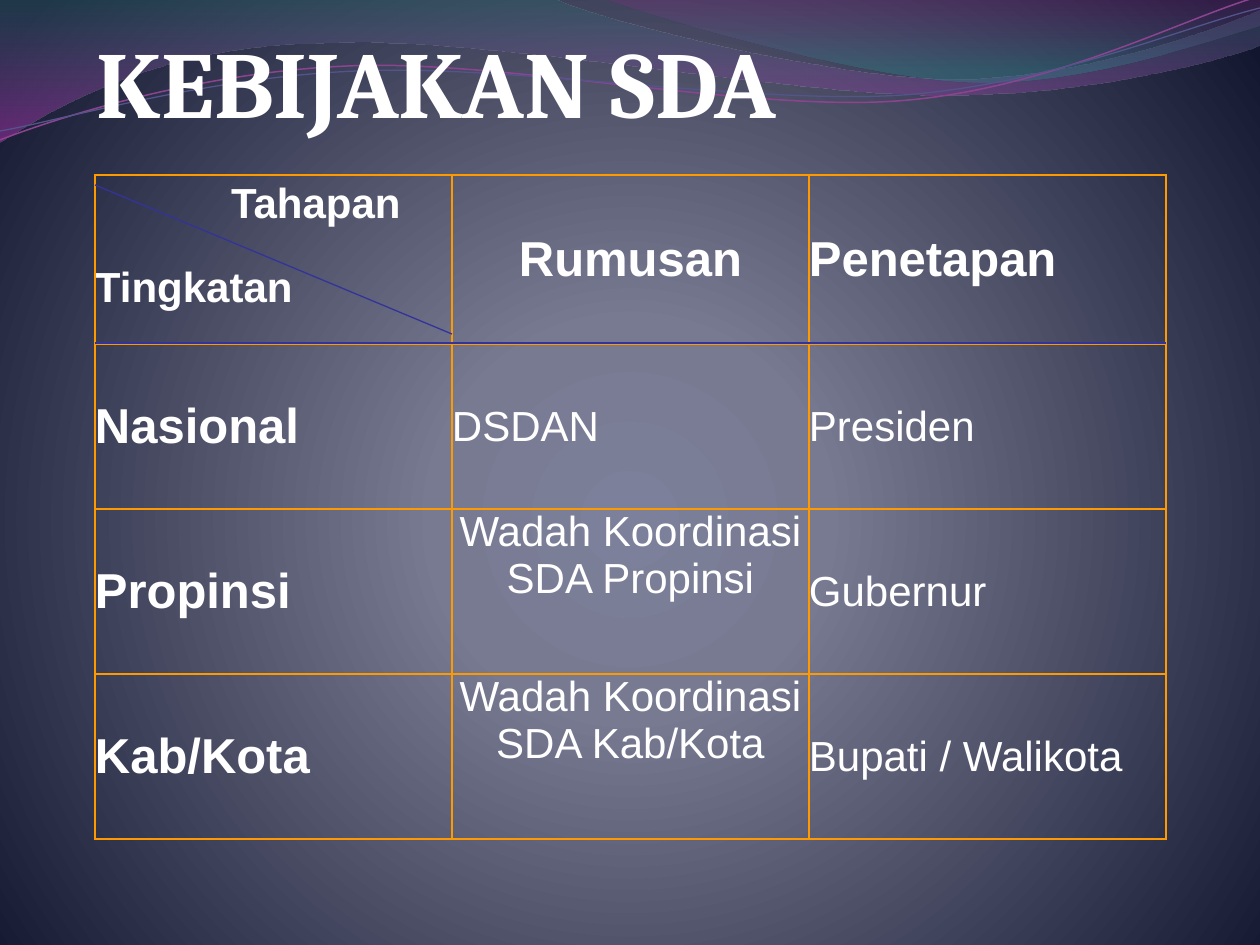
from dataclasses import dataclass
from math import cos, radians, sin

from pptx import Presentation
from pptx.dml.color import RGBColor as Rgb
from pptx.enum.shapes import MSO_CONNECTOR as Connector
from pptx.enum.text import MSO_ANCHOR as Anchor, PP_ALIGN as Align
from pptx.oxml import parse_xml
from pptx.oxml.ns import nsdecls
from pptx.util import Emu, Pt

EMU_PER_PX = 914400 / 126


@dataclass(frozen=True)
class Theme:
    text: str = "FFFFFF"
    border: str = "FF9900"
    rule: str = "333399"
    title_font: str = "Cambria"
    body_font: str = "Arial"
    title_size: int = 54
    heading_size: int = 28
    body_size: int = 24
    # Gradient stops: position %, colour, opacity %
    backdrop: tuple = ((0, "7D809A", 100), (25, "787A92", 100), (100, "13162F", 100))
    wide_wave: tuple = ((0, "2D6368", 45), (100, "A530A9", 55))
    corner_wave: tuple = ((0, "7F2F82", 30), (80, "2F7B82", 45))
    upper_strand: str = "8D4490"
    lower_strand: str = "53548A"


THEME = Theme()

# Outlines in px: two numbers are a straight step, six are a Bezier curve
WIDE_WAVE = [(0, -1), (554, -1), (600, 21, 837, 79, 955, 79),
             (1075, 79, 1207, 33, 1260, 11), (1261, 45),
             (1239, 55, 1096, 96, 940, 95), (784, 95, 481, 35, 324, 43),
             (163, 44, 58, 105, -1, 142), (0, -1)]
CORNER_WAVE = [(604, -1), (641, 14, 859, 78, 969, 82),
               (1079, 87, 1211, 40, 1260, 26), (1260, 0), (604, -1)]
UPPER_STRAND = [(0, 140), (60, 117, 199, 72, 349, 66),
                (498, 59, 747, 112, 898, 101), (1049, 90, 1182, 19, 1257, -3)]
LOWER_STRAND = [(0, 131), (59, 121, 207, 77, 357, 71),
                (508, 64, 752, 105, 903, 95), (1053, 84, 1186, 26, 1260, 8)]
STRAND_TURN = 357.3

TABLE_LEFT, TABLE_TOP, COLUMN_WIDTH = 95, 175, 357
ROW_HEIGHTS = [169, 165, 165, 165]
LEVELS = [
    ("Nasional", "DSDAN", "Presiden"),
    ("Propinsi", "Wadah Koordinasi SDA Propinsi", "Gubernur"),
    ("Kab/Kota", "Wadah Koordinasi SDA Kab/Kota", "Bupati / Walikota"),
]


def px(length):
    return Emu(round(length * EMU_PER_PX))


def set_values(target, values):
    for name, value in values.items():
        setattr(target, name, value)


def gradient(stops, direction):
    marks = "".join(
        f'<a:gs pos="{pos * 1000}"><a:srgbClr val="{color}">'
        f'<a:alpha val="{opacity * 1000}"/></a:srgbClr></a:gs>'
        for pos, color, opacity in stops)
    return parse_xml(f'<a:gradFill {nsdecls("a")} rotWithShape="1">'
                     f'<a:gsLst>{marks}</a:gsLst>{direction}</a:gradFill>')


def put_gradient(fill, holder, stops, direction):
    fill.gradient()
    preset = next(holder.iter("{*}gradFill"))
    preset.getparent().replace(preset, gradient(stops, direction))


def turn(point, center, degrees):
    angle = radians(degrees)
    x, y = point[0] - center[0], point[1] - center[1]
    return (center[0] + x * cos(angle) - y * sin(angle),
            center[1] + x * sin(angle) + y * cos(angle))


def add_outline(slide, outline, close, center=(0, 0), rotation=0):
    """Draw the outline; a rotated one is laid flat first, then turned."""
    nodes = [turn(part[i:i + 2], center, -rotation)
             for part in outline for i in range(0, len(part), 2)]
    start, *rest = [(px(x), px(y)) for x, y in nodes]
    builder = slide.shapes.build_freeform(*start)
    builder.add_line_segments(rest, close=close)
    shape = builder.convert_to_shape()
    set_values(shape, {"rotation": rotation})
    shape.shadow.inherit = False

    # Gather the three steps of each curve into one Bezier segment
    steps = iter(list(shape.element.iter("{*}lnTo")))
    for part in outline[1:]:
        segment = [next(steps) for _ in range(len(part) // 2)]
        if len(segment) == 3:
            curve = parse_xml(f'<a:cubicBezTo {nsdecls("a")}/>')
            segment[0].addprevious(curve)
            for step in segment:
                curve.append(step[0])
                step.getparent().remove(step)
    return shape


def add_wave(slide, outline, stops):
    wave = add_outline(slide, outline, True)
    put_gradient(wave.fill, wave.element.spPr, stops, '<a:lin ang="5400000" scaled="1"/>')
    wave.line.fill.background()


def add_strand(slide, outline, center, color, width):
    strand = add_outline(slide, outline, False, center, STRAND_TURN)
    strand.fill.background()
    strand.line.color.rgb = Rgb.from_string(color)
    strand.line.width = Pt(width)


def add_rule(slide, start, end):
    rule = slide.shapes.add_connector(Connector.STRAIGHT, *map(px, start + end))
    rule.line.color.rgb = Rgb.from_string(THEME.rule)
    rule.line.width = Pt(0.75)
    rule.element.spPr.append(parse_xml(f'<a:effectLst {nsdecls("a")}/>'))


def write(paragraph, words, size, bold, font=THEME.body_font, align=Align.LEFT):
    paragraph.alignment = align
    run = paragraph.add_run()
    run.text = words
    set_values(run.font, {"name": font, "size": Pt(size), "bold": bold})
    run.font.color.rgb = Rgb.from_string(THEME.text)


def format_cell(cell, anchor):
    set_values(cell, {"margin_left": 0, "margin_top": 0, "margin_right": 0,
                      "margin_bottom": 0, "vertical_anchor": anchor})
    cell.fill.background()
    properties = cell._tc.get_or_add_tcPr()
    for place, side in enumerate("LRTB"):
        properties.insert(place, parse_xml(
            f'<a:ln{side} {nsdecls("a")} w="{Pt(1)}"><a:solidFill>'
            f'<a:srgbClr val="{THEME.border}"/></a:solidFill></a:ln{side}>'))


def fill_corner(cell):
    format_cell(cell, Anchor.TOP)
    cell.margin_top = px(6)
    stage = cell.text_frame.paragraphs[0]
    write(stage, "Tahapan", THEME.body_size, True)
    for name, value in {"marL": px(136), "indent": 0}.items():
        stage._p.get_or_add_pPr().set(name, str(int(value)))
    level = cell.text_frame.add_paragraph()
    level.space_before = px(37)
    write(level, "Tingkatan", THEME.body_size, True)


def fill_cell(cell, words, heading=False, align=Align.LEFT, anchor=Anchor.MIDDLE):
    format_cell(cell, anchor)
    size = THEME.heading_size if heading else THEME.body_size
    write(cell.text_frame.paragraphs[0], words, size, heading, align=align)


def add_policy_table(slide):
    frame = slide.shapes.add_table(4, 3, px(TABLE_LEFT), px(TABLE_TOP),
                                   px(3 * COLUMN_WIDTH), px(sum(ROW_HEIGHTS)))
    table = frame.table
    set_values(table, {"first_row": False, "horz_banding": False})
    for column in table.columns:
        column.width = px(COLUMN_WIDTH)
    for row, height in zip(table.rows, ROW_HEIGHTS):
        row.height = px(height)

    fill_corner(table.cell(0, 0))
    fill_cell(table.cell(0, 1), "Rumusan", True, Align.CENTER)
    fill_cell(table.cell(0, 2), "Penetapan", True)
    for row, (level, drafter, approver) in enumerate(LEVELS, 1):
        fill_cell(table.cell(row, 0), level, True)
        # Coordination bodies sit centred at the top of their cells
        placing = {"align": Align.CENTER, "anchor": Anchor.TOP} if row > 1 else {}
        fill_cell(table.cell(row, 1), drafter, **placing)
        fill_cell(table.cell(row, 2), approver)


def add_title(slide):
    title = slide.shapes.add_textbox(px(97), px(30), px(975), px(107)).text_frame
    set_values(title, {"word_wrap": True, "vertical_anchor": Anchor.BOTTOM,
                       "margin_left": 0, "margin_top": px(6),
                       "margin_right": 0, "margin_bottom": 0})
    write(title.paragraphs[0], "KEBIJAKAN SDA", THEME.title_size, True, THEME.title_font)


def main():
    deck = Presentation()
    set_values(deck, {"slide_width": px(1260), "slide_height": px(945)})
    slide = deck.slides.add_slide(deck.slide_layouts[6])

    # Backdrop and waves
    put_gradient(slide.background.fill, slide.element, THEME.backdrop,
                 '<a:path path="circle"><a:fillToRect l="10000" t="110000" '
                 'r="10000" b="100000"/></a:path>')
    add_wave(slide, WIDE_WAVE, THEME.wide_wave)
    add_wave(slide, CORNER_WAVE, THEME.corner_wave)
    add_strand(slide, UPPER_STRAND, (629, 72), THEME.upper_strand, 0.85)
    add_strand(slide, LOWER_STRAND, (629, 74), THEME.lower_strand, 0.75)

    # Table with its header rules
    add_policy_table(slide)
    header_bottom = TABLE_TOP + ROW_HEIGHTS[0] - 1
    add_rule(slide, (TABLE_LEFT, 185), (TABLE_LEFT + COLUMN_WIDTH, 334))
    add_rule(slide, (TABLE_LEFT, header_bottom),
             (TABLE_LEFT + 3 * COLUMN_WIDTH, header_bottom))

    add_title(slide)
    deck.save("out.pptx")


if __name__ == "__main__":
    main()
